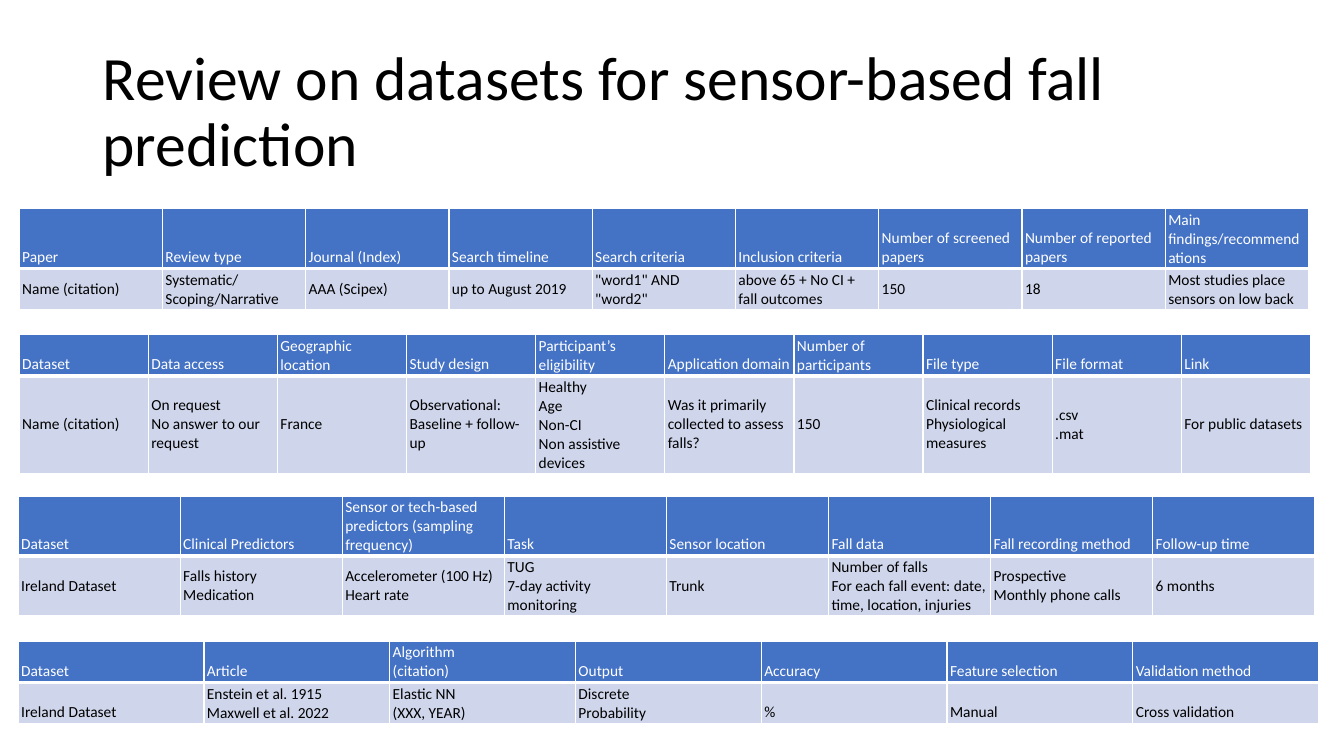
from lxml import etree
from pptx import Presentation
from pptx import util as u
from pptx.dml.color import RGBColor
from pptx.enum import text
from pptx.oxml import ns

TITLE = "Review on datasets for sensor-based fall prediction"
HEADER, BODY, WHITE, BLACK = "4472C4", "CFD5EA", "FFFFFF", "000000"
FONT = "Calibri"
LINE, PAD_X, PAD_Y = 0.185, 0.03, 0.02
MIDDLE, BOTTOM = text.MSO_ANCHOR.MIDDLE, text.MSO_ANCHOR.BOTTOM

TABLES = [
    dict(left=0.19, top=3.32, width=12.81, lines=(2, 5), anchor=MIDDLE, columns=[
        ("Dataset", "Name (citation)"),
        ("Data access", "On request\nNo answer to our request"),
        ("Geographic location", "France"),
        ("Study design", "Observational:\nBaseline + follow-up"),
        ("Participant’s eligibility", "Healthy\nAge\nNon-CI\nNon assistive devices"),
        ("Application domain", "Was it primarily collected to assess falls?"),
        ("Number of participants", "150"),
        ("File type", "Clinical records\nPhysiological measures"),
        ("File format", ".csv\n.mat"),
        ("Link", "For public datasets"),
    ]),
    dict(left=0.18, top=4.92, width=12.86, lines=(3, 3), anchor=MIDDLE, columns=[
        ("Dataset", "Ireland Dataset"),
        ("Clinical Predictors", "Falls history\nMedication"),
        ("Sensor or tech-based predictors (sampling frequency)",
         "Accelerometer (100 Hz)\nHeart rate"),
        ("Task", "TUG\n7-day activity monitoring"),
        ("Sensor location", "Trunk"),
        ("Fall data", "Number of falls\nFor each fall event: date, time, location, injuries"),
        ("Fall recording method", "Prospective\nMonthly phone calls"),
        ("Follow-up time", "6 months"),
    ]),
    dict(left=0.18, top=6.36, width=12.9, lines=(2, 2), anchor=BOTTOM, columns=[
        ("Dataset", "Ireland Dataset"),
        ("Article", "Enstein et al. 1915\nMaxwell et al. 2022"),
        ("Algorithm\n(citation)", "Elastic NN\n(XXX, YEAR)"),
        ("Output", "Discrete\nProbability"),
        ("Accuracy", "%"),
        ("Feature selection", "Manual"),
        ("Validation method", "Cross validation"),
    ]),
    dict(left=0.19, top=2.07, width=12.79, lines=(3, 2), anchor=MIDDLE, columns=[
        ("Paper", "Name (citation)"),
        ("Review type", "Systematic/Scoping/Narrative"),
        ("Journal (Index)", "AAA (Scipex)"),
        ("Search timeline", "up to August 2019"),
        ("Search criteria", '"word1" AND "word2"'),
        ("Inclusion criteria", "above 65 + No CI + fall outcomes"),
        ("Number of screened papers", "150"),
        ("Number of reported papers", "18"),
        ("Main findings/recommendations", "Most studies place sensors on low back"),
    ]),
]


def rgb(value):
    return RGBColor.from_string(value)


def write(tf, words, size=11, color=BLACK, spacing=1.0):
    tf.word_wrap = True
    p = tf.paragraphs[0]
    p.text = words.replace("\n", "\v")
    p.line_spacing = spacing
    for r in p.runs:
        r.font.name = FONT
        r.font.size = u.Pt(size)
        r.font.color.rgb = rgb(color)


def set_borders(cell, bottom):
    tc_pr = cell._tc.get_or_add_tcPr()
    for i, (side, width) in enumerate(zip("LRTB", (1, 1, 1, bottom))):
        ln = etree.Element(ns.qn(f"a:ln{side}"), w=str(u.Pt(width)))
        fill = etree.SubElement(ln, ns.qn("a:solidFill"))
        etree.SubElement(fill, ns.qn("a:srgbClr"), val=WHITE)
        tc_pr.insert(i, ln)


def format_cell(cell, words, fill, color, anchor, bottom):
    cell.fill.solid()
    cell.fill.fore_color.rgb = rgb(fill)
    cell.margin_left = cell.margin_right = u.Inches(PAD_X)
    cell.margin_top = cell.margin_bottom = u.Inches(PAD_Y)
    cell.vertical_anchor = anchor
    write(cell.text_frame, words, color=color)
    set_borders(cell, bottom)


def add_review_table(slide, left, top, width, lines, anchor, columns):
    heights = [u.Inches(n * LINE + 2 * PAD_Y) for n in lines]
    frame = slide.shapes.add_table(2, len(columns), u.Inches(left), u.Inches(top),
                                   u.Inches(width), sum(heights))
    table = frame.table
    for row, height in zip(table.rows, heights):
        row.height = height
    for i, (heading, example) in enumerate(columns):
        format_cell(table.cell(0, i), heading, HEADER, WHITE, BOTTOM, 3)
        format_cell(table.cell(1, i), example, BODY, BLACK, anchor, 1)


def main():
    prs = Presentation()
    prs.slide_width, prs.slide_height = u.Inches(13.33), u.Inches(7.5)
    slide = prs.slides.add_slide(prs.slide_layouts[6])
    title = slide.shapes.add_textbox(u.Inches(0.92), u.Inches(0.4),
                                     u.Inches(11.5), u.Inches(1.45))
    title.text_frame.vertical_anchor = MIDDLE
    write(title.text_frame, TITLE, size=44, spacing=0.9)
    for review_table in TABLES:
        add_review_table(slide, **review_table)
    prs.save("out.pptx")


if __name__ == "__main__":
    main()
